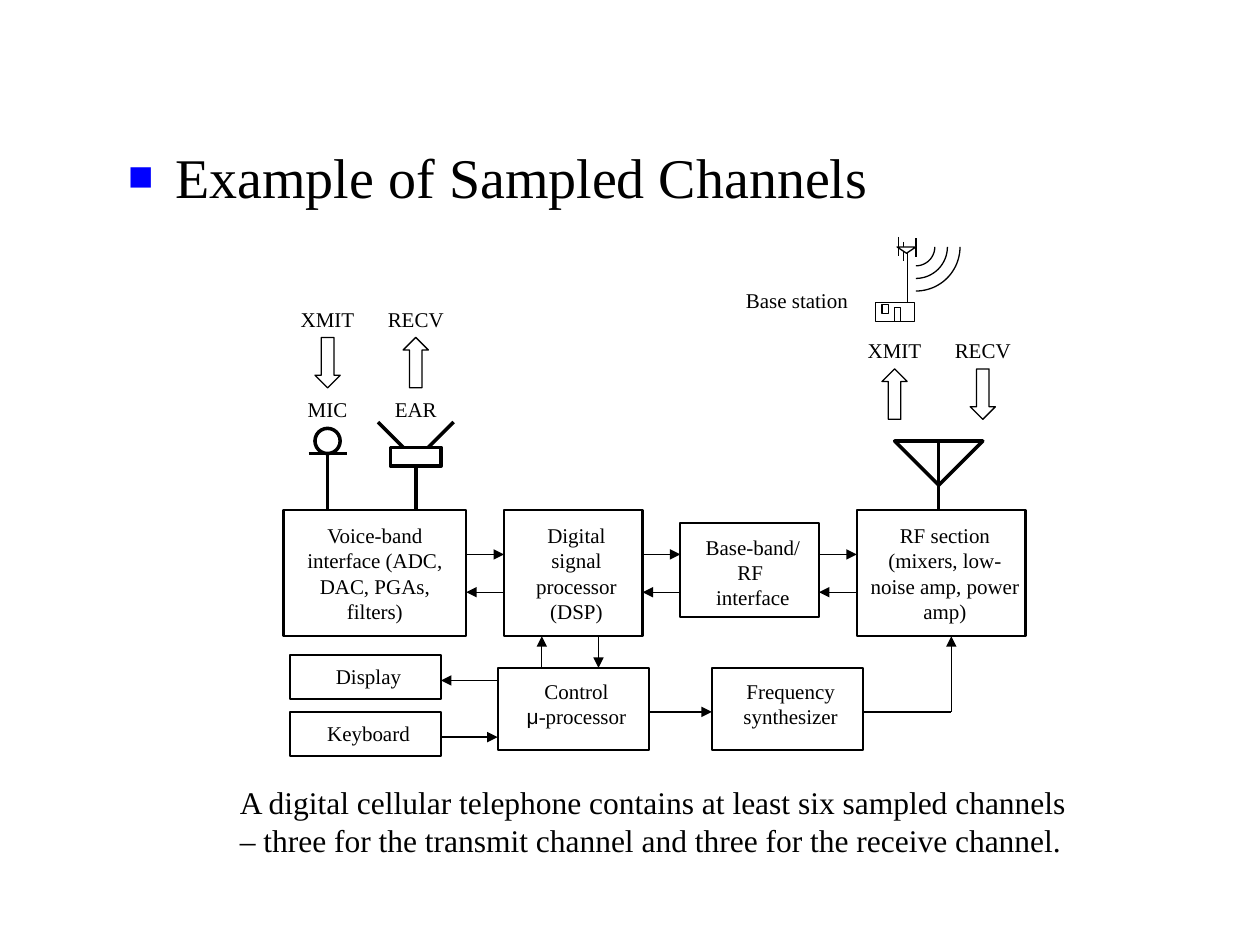
from dataclasses import dataclass
from math import cos, pi, sin

from lxml.etree import SubElement
from pptx import Presentation
from pptx.dml.color import RGBColor
from pptx.enum.shapes import MSO_CONNECTOR, MSO_SHAPE
from pptx.enum.text import MSO_ANCHOR, MSO_AUTO_SIZE, PP_ALIGN
from pptx.oxml.ns import qn
from pptx.util import Pt


@dataclass(frozen=True)
class Theme:
    ink: RGBColor = RGBColor(0, 0, 0)
    paper: RGBColor = RGBColor(255, 255, 255)
    bullet: str = "0000FF"
    serif: str = "Times New Roman"
    sans: str = "Arial"
    heading: int = 32
    caption: int = 18
    label: int = 12
    thin: float = 0.75
    frame: float = 1.25
    thick: float = 2


def write_text(frame, paragraphs, *, theme, size, align=None):
    """Fill a text frame; a paragraph is a string or a list of (text, font) runs."""
    for index, content in enumerate(paragraphs):
        paragraph = frame.paragraphs[0] if index == 0 else frame.add_paragraph()
        paragraph.alignment = align
        runs = [(content, theme.serif)] if isinstance(content, str) else content
        for text, font in runs:
            run = paragraph.add_run()
            run.text = text
            run.font.name = font
            run.font.size = Pt(size)
            run.font.color.rgb = theme.ink


class Diagram:
    """Draws on one slide in one theme; all arguments are in points."""

    def __init__(self, slide, theme):
        self.slide, self.shapes, self.theme = slide, slide.shapes, theme

    def heading(self, text, *box):
        body = self.slide.placeholders[1]
        body.left, body.top, body.width, body.height = map(Pt, box)
        write_text(body.text_frame, [text], theme=self.theme, size=self.theme.heading)
        properties = body.text_frame.paragraphs[0]._p.get_or_add_pPr()
        color = SubElement(properties, qn("a:buClr"))
        SubElement(color, qn("a:srgbClr"), val=self.theme.bullet)
        SubElement(properties, qn("a:buSzPct"), val="75000")
        SubElement(properties, qn("a:buFont"), typeface=self.theme.sans)
        SubElement(properties, qn("a:buChar"), char="■")

    def caption(self, lines, *box):
        frame = self.shapes.add_textbox(*map(Pt, box)).text_frame
        frame.word_wrap = False
        frame.auto_size = MSO_AUTO_SIZE.SHAPE_TO_FIT_TEXT
        write_text(frame, lines, theme=self.theme, size=self.theme.caption)

    def label(self, text, *box):
        frame = self.shapes.add_textbox(*map(Pt, box)).text_frame
        frame.word_wrap = True
        write_text(frame, [text], theme=self.theme, size=self.theme.label,
                   align=PP_ALIGN.CENTER)

    def outline(self, shape, width, filled):
        shape.shadow.inherit = False
        if filled:
            shape.fill.solid()
            shape.fill.fore_color.rgb = self.theme.paper
        else:
            shape.fill.background()
        if width:
            shape.line.color.rgb = self.theme.ink
            shape.line.width = Pt(width)
        else:
            shape.line.fill.background()

    def preset(self, kind, *box, width, filled=True, rotation=0):
        shape = self.shapes.add_shape(kind, *map(Pt, box))
        self.outline(shape, width, filled)
        shape.rotation = rotation
        return shape

    def block(self, lines, left, top, width, height, inset, extra):
        """A framed box; its text area is inset vertically and wider by extra."""
        area = self.preset(MSO_SHAPE.RECTANGLE, left, top + inset, width + extra,
                           height - 2 * inset, width=0)
        area.text_frame.word_wrap = True
        area.text_frame.vertical_anchor = MSO_ANCHOR.TOP
        write_text(area.text_frame, lines, theme=self.theme, size=self.theme.label,
                   align=PP_ALIGN.CENTER)
        self.preset(MSO_SHAPE.RECTANGLE, left, top, width, height,
                    width=self.theme.frame, filled=False)

    def line(self, x1, y1, x2, y2, width, arrow=False):
        connector = self.shapes.add_connector(
            MSO_CONNECTOR.STRAIGHT, *map(Pt, (x1, y1, x2, y2)))
        connector.line.color.rgb = self.theme.ink
        connector.line.width = Pt(width)
        if arrow:
            SubElement(connector.line._get_or_add_ln(), qn("a:tailEnd"), type="triangle")
        SubElement(connector._element.spPr, qn("a:effectLst"))
        return connector

    def wave(self, x, y, radius, steps=24):
        """A quarter circle around (x, y), from straight below to the right."""
        angles = [pi / 2 * (1 - step / steps) for step in range(steps + 1)]
        points = [(Pt(x + radius * cos(a)), Pt(y + radius * sin(a))) for a in angles]
        builder = self.shapes.build_freeform(*points[0], scale=1.0)
        builder.add_line_segments(points[1:], close=False)
        self.outline(builder.convert_to_shape(), self.theme.thin, filled=False)


def draw_handset(diagram):
    thick = diagram.theme.thick
    earpiece = diagram.preset(MSO_SHAPE.RECTANGLE, 223.2, 255.6, 28.8, 10.8, width=thick)
    diagram.line(244.8, 255.6, 259.2, 241.2, thick)
    diagram.line(216, 241.2, 230.4, 255.6, thick)
    diagram.line(237.6, 266.4, 237.6, 291.6, thick).begin_connect(earpiece, 2)
    diagram.preset(MSO_SHAPE.OVAL, 180, 244.8, 14.4, 14.4, width=thick)
    diagram.line(176.4, 259.2, 198, 259.2, thick)
    diagram.line(187.2, 259.2, 187.2, 291.6, thick)
    diagram.preset(MSO_SHAPE.ISOSCELES_TRIANGLE, 511.2, 252, 50.4, 25.2,
                   width=thick, rotation=180)
    diagram.line(536.4, 252, 536.4, 291.6, thick)


def draw_blocks(diagram):
    theme = diagram.theme
    control = [("μ", theme.sans), ("-processor", theme.serif)]
    for lines, *measures in (
        (["Voice-band interface (ADC, DAC, PGAs, filters)"],
         162, 291.6, 104.4, 72, 3.6, 0),
        (["Digital", "signal", "processor", "(DSP)"], 288, 291.6, 79.2, 72, 3.6, 3.6),
        (["Base-band/", "RF ", "interface"], 388.8, 298.8, 79.2, 54, 2.9, 3.6),
        (["RF section", "(mixers, low-noise amp, power amp)"],
         489.6, 291.6, 96.5, 72, 3.6, 4.3),
        (["Control", control], 284.4, 381.6, 86.4, 46.8, 2.5, 3.6),
        (["Display"], 165.6, 374.4, 86.4, 25.2, 1.44, 3.6),
        (["Keyboard"], 165.6, 406.8, 86.4, 25.2, 1.44, 3.6),
        (["Frequency synthesizer"], 406.8, 381.6, 86.4, 46.8, 2.5, 3.6),
    ):
        diagram.block(lines, *measures)


def draw_signals(diagram):
    thin = diagram.theme.thin
    for left, right in ((266.4, 288), (367.2, 388.8), (468, 489.6)):
        diagram.line(left, 316.8, right, 316.8, thin, arrow=True)
        diagram.line(right, 338.4, left, 338.4, thin, arrow=True)
    diagram.line(493.2, 406.8, 543.6, 406.8, thin)
    for ends in (
        (543.6, 406.8, 543.6, 363.6),
        (370.8, 406.8, 406.8, 406.8),
        (342, 363.6, 342, 381.6),
        (309.6, 381.6, 309.6, 363.6),
        (284.4, 388.8, 252, 388.8),
        (252, 421.2, 284.4, 421.2),
    ):
        diagram.line(*ends, thin, arrow=True)


def draw_base_station(diagram):
    thin = diagram.theme.thin
    for radius in (25.2, 18, 10.8):
        diagram.wave(523.4, 141.1, radius)
    for x, top in ((513.4, 135.4), (516.2, 138.2), (523.4, 136.1)):
        diagram.line(x, top, x, top + 10.8, thin)
    diagram.preset(MSO_SHAPE.ISOSCELES_TRIANGLE, 512.6, 141.1, 10.8, 3.6,
                   width=thin, rotation=180)
    diagram.line(518.4, 144.7, 518.4, 172.8, thin)
    diagram.preset(MSO_SHAPE.RECTANGLE, 504, 174.2, 3.6, 5, width=thin)
    diagram.preset(MSO_SHAPE.RECTANGLE, 511.2, 175.7, 3.6, 7.9, width=thin)
    diagram.preset(MSO_SHAPE.RECTANGLE, 500.4, 172.8, 22.3, 10.8,
                   width=thin, filled=False)
    diagram.label("Base station", 414, 160.6, 82.8, 36)


def draw_directions(diagram):
    diagram.label("MIC", 162, 223.2, 50.4, 21.6)
    diagram.label("EAR", 216, 223.2, 43.2, 21.6)
    for left, top, turns in ((162, 171.4, (180, 0)), (486, 189.4, (0, 180))):
        diagram.label("XMIT", left, top, 50.4, 25.2)
        diagram.label("RECV", left + 46.8, top, 57.6, 25.2)
        for column, turn in enumerate(turns):
            diagram.preset(MSO_SHAPE.UP_ARROW, left + 18 + 50.4 * column, top + 21.4,
                           14.4, 28.8, width=diagram.theme.thin, rotation=turn)


def main():
    presentation = Presentation()
    presentation.slide_width, presentation.slide_height = Pt(720), Pt(540)
    slide = presentation.slides.add_slide(presentation.slide_layouts[1])
    title = slide.shapes.title._element
    title.getparent().remove(title)
    diagram = Diagram(slide, Theme())
    diagram.heading("Example of Sampled Channels", 66, 78, 612, 324)
    diagram.caption(
        ["A digital cellular telephone contains at least six sampled channels",
         "– three for the transmit channel and three for the receive channel."],
        130, 444, 488, 50.4)
    for draw in (draw_handset, draw_blocks, draw_signals, draw_base_station,
                 draw_directions):
        draw(diagram)
    presentation.save("out.pptx")


if __name__ == "__main__":
    main()
